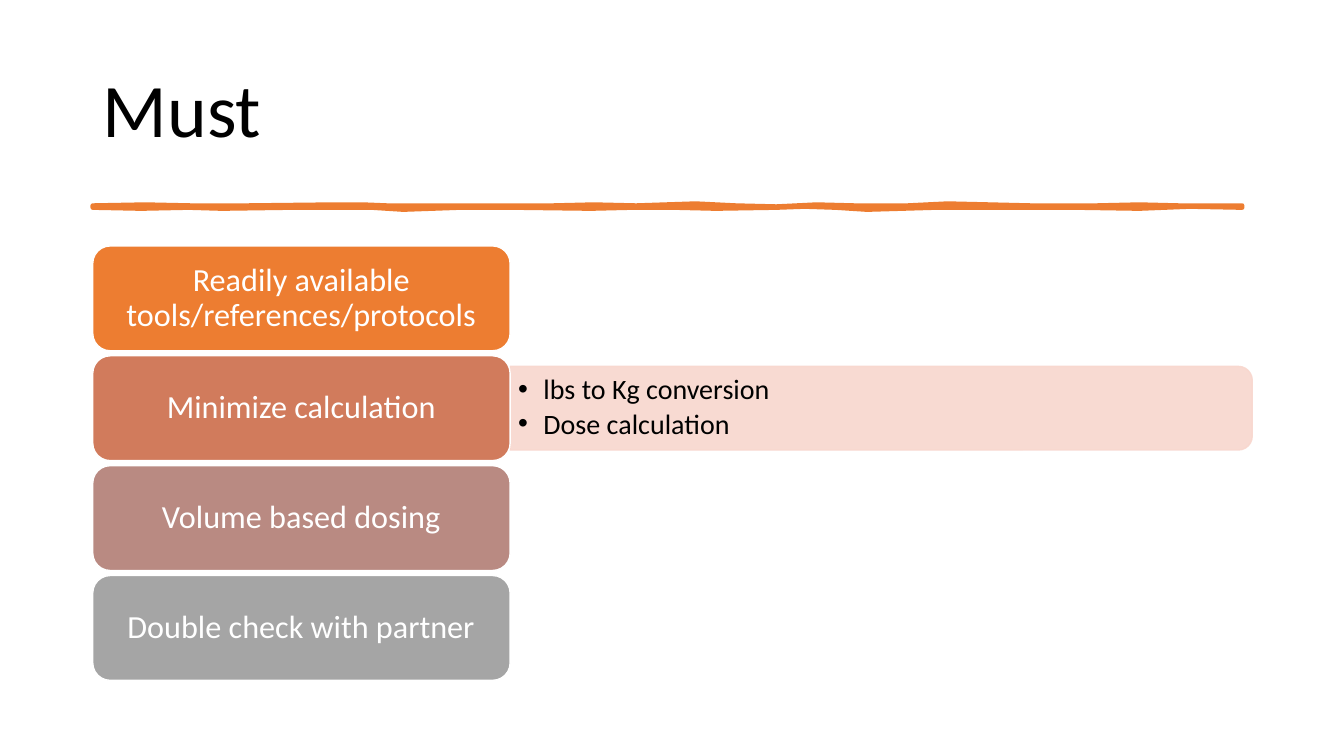
from dataclasses import dataclass

from lxml.etree import SubElement
from pptx import Presentation
from pptx.dml.color import RGBColor
from pptx.enum.shapes import MSO_SHAPE as SHAPE
from pptx.enum.text import MSO_ANCHOR as ANCHOR, MSO_AUTO_SIZE as AUTO, PP_ALIGN as ALIGN
from pptx.oxml.ns import qn
from pptx.util import Inches, Pt


@dataclass(frozen=True)
class Theme:
    font: str = "Calibri"
    text: str = "000000"
    light: str = "FFFFFF"
    accent: str = "ED7D31"
    panel: str = "F8D7CE"
    title_size: float = 54
    label_size: float = 23
    detail_size: float = 20


THEME = Theme()
LEFT, TOP = 0.92, 2.44
LABEL_W, LABEL_H, PITCH = 4.14, 1.04, 1.09
PANEL_W, PANEL_H = 7.36, 0.83

LABELS = [
    ("Readily available tools/references/protocols", THEME.accent),
    ("Minimize calculation", "D17B5C"),
    ("Volume based dosing", "B98A82"),
    ("Double check with partner", "A5A5A5"),
]
DETAILS = ["lbs to Kg conversion", "Dose calculation"]
DETAIL_ROW = 1

# Upper and lower edges of the hand-drawn rule
RULE_TOP = [(0.92, 2.04), (1.44, 2.03), (1.9, 2.04), (2.44, 2.04), (3.31, 2.03),
            (3.6, 2.03), (3.84, 2.04), (4.6, 2.04), (5.48, 2.04), (5.89, 2.03),
            (6.31, 2.04), (6.9, 2.02), (7.3, 2.04), (7.7, 2.05), (8.1, 2.03),
            (8.48, 2.04), (9.0, 2.04), (9.4, 2.02), (10.23, 2.04), (10.87, 2.04),
            (11.3, 2.03), (11.7, 2.04), (12.32, 2.04)]
RULE_BOTTOM = [(12.32, 2.06), (11.8, 2.05), (11.3, 2.07), (10.68, 2.06), (10.2, 2.06),
               (9.73, 2.06), (9.28, 2.06), (8.6, 2.08), (8.29, 2.06), (7.98, 2.05),
               (7.7, 2.06), (7.1, 2.07), (6.69, 2.06), (6.27, 2.06), (5.86, 2.07),
               (5.1, 2.06), (4.56, 2.06), (4.0, 2.08), (3.69, 2.06), (3.16, 2.06),
               (2.89, 2.06), (2.2, 2.07), (1.87, 2.06), (1.4, 2.07), (0.92, 2.06)]


def place(sp, left, top, width, height):
    sp.left, sp.top = Inches(left), Inches(top)
    sp.width, sp.height = Inches(width), Inches(height)


def style_shape(sp, fill, line, width):
    sp.shadow.inherit = False
    sp.fill.solid()
    sp.fill.fore_color.rgb = RGBColor.from_string(fill)
    sp.line.color.rgb = RGBColor.from_string(line)
    sp.line.width = Pt(width)


def write(sp, lines, size, color, align=ALIGN.LEFT, inset=(0.1, 0.05), after=0):
    """Fill a shape with evenly formatted, vertically centred paragraphs."""
    tf = sp.text_frame
    tf.text = "\n".join(lines)
    tf.word_wrap, tf.auto_size = True, AUTO.NONE
    tf.vertical_anchor = ANCHOR.MIDDLE
    tf.margin_left = tf.margin_right = Inches(inset[0])
    tf.margin_top = tf.margin_bottom = Inches(inset[1])
    for p in tf.paragraphs:
        p.alignment, p.line_spacing = align, 0.9
        p.space_before, p.space_after = Pt(0), Pt(after)
        p.font.name, p.font.size = THEME.font, Pt(size)
        p.font.color.rgb = RGBColor.from_string(color)


def add_bullet(p, indent):
    pPr = p._p.get_or_add_pPr()
    pPr.set("marL", str(Inches(indent)))
    pPr.set("indent", str(-Inches(indent)))
    bullet = pPr.makeelement(qn("a:buChar"), {"char": "•"})
    pPr.insert_element_before(bullet, "a:tabLst", "a:defRPr", "a:extLst")


def add_rule(s):
    points = [(Inches(x), Inches(y)) for x, y in RULE_TOP + RULE_BOTTOM]
    builder = s.shapes.build_freeform(*points[0])
    builder.add_line_segments(points[1:], close=True)
    style_shape(builder.convert_to_shape(), THEME.accent, THEME.accent, 3.25)


def add_label(s, row, text, fill):
    sp = s.shapes.add_shape(SHAPE.ROUNDED_RECTANGLE, Inches(LEFT), Inches(TOP + row * PITCH),
                            Inches(LABEL_W), Inches(LABEL_H))
    style_shape(sp, fill, THEME.light, 1)
    write(sp, [text], THEME.label_size, THEME.light, ALIGN.CENTER, (0.15, 0.1))


def add_details(s, body):
    """Set the bulleted body on a panel whose right-hand corners are rounded."""
    left = LEFT + LABEL_W
    middle = TOP + DETAIL_ROW * PITCH + LABEL_H / 2
    panel = s.shapes.add_shape(
        SHAPE.ROUND_2_SAME_RECTANGLE,
        Inches(left + (PANEL_W - PANEL_H) / 2), Inches(middle - PANEL_W / 2),
        Inches(PANEL_H), Inches(PANEL_W))
    panel.rotation = 90
    style_shape(panel, THEME.panel, THEME.panel, 1)
    for color in panel._element.spPr.iter(qn("a:srgbClr")):
        SubElement(color, qn("a:alpha"), val="90000")
    body._element.addprevious(panel._element)

    place(body, left, middle - 0.38, 7.32, 0.75)
    write(body, DETAILS, THEME.detail_size, THEME.text, inset=(0.08, 0.04), after=3)
    for p in body.text_frame.paragraphs:
        add_bullet(p, 0.25)


def main():
    prs = Presentation()
    prs.slide_width, prs.slide_height = Inches(13.33), Inches(7.5)
    s = prs.slides.add_slide(prs.slide_layouts[1])
    title, body = s.placeholders
    place(title, LEFT, 0.4, 11.5, 1.45)
    write(title, ["Must"], THEME.title_size, THEME.text)
    add_rule(s)
    add_details(s, body)
    for row, (text, fill) in enumerate(LABELS):
        add_label(s, row, text, fill)
    prs.save("out.pptx")


if __name__ == "__main__":
    main()
